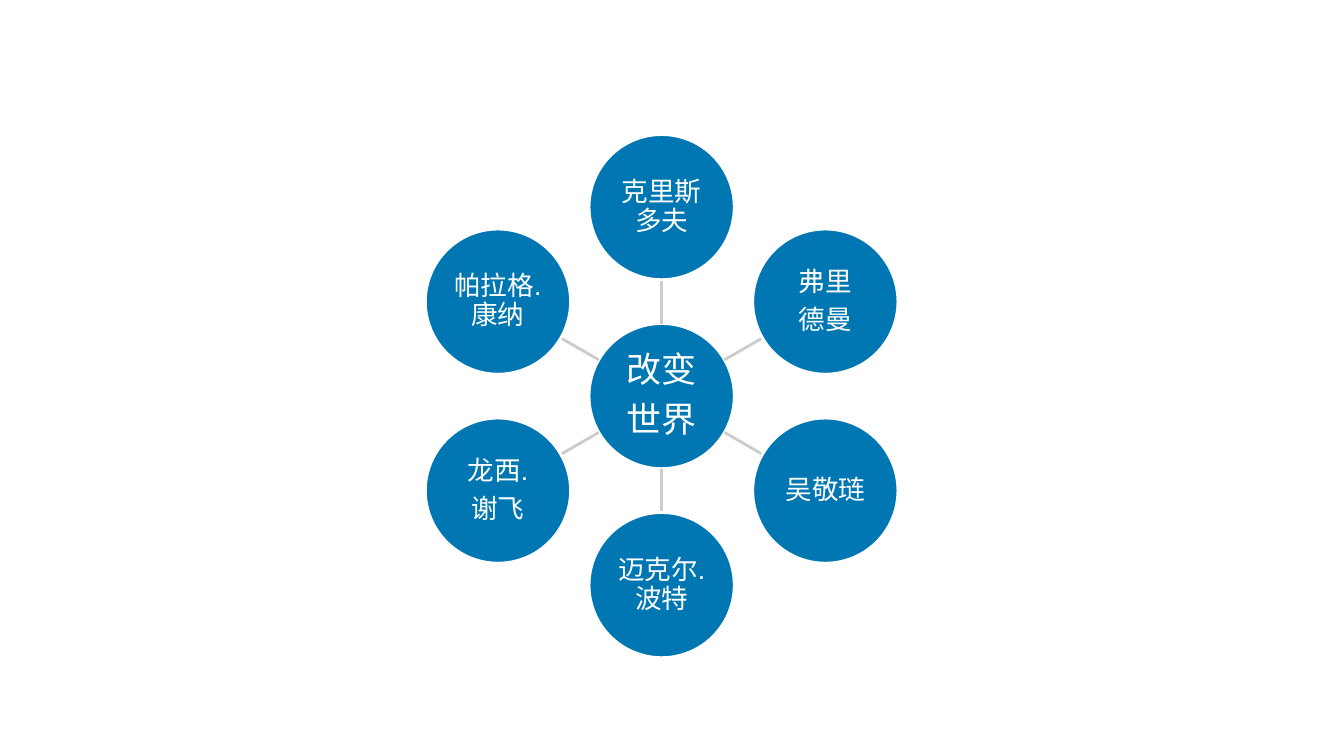
import math
from dataclasses import dataclass

from lxml import etree
from pptx import Presentation, util as u
from pptx.dml.color import RGBColor
from pptx.enum import shapes, text
from pptx.oxml.ns import qn

# Grid: square cells, 100 rows to the slide height
WIDTH, HEIGHT = u.Inches(13.33), u.Inches(7.5)
CELL = HEIGHT / 100
CENTER_COL, CENTER_ROW = 87.5, 52.4
RADIUS = 9.6
ORBIT = 25

BLUE, GREY, WHITE = "0077B2", "CCCCCC", "FFFFFF"


@dataclass(frozen=True)
class Node:
    lines: tuple[str, ...]
    size: int = 19
    inset: float = 0.01


HUB = Node(("改变", "世界"), size=25, inset=0.02)

# Clockwise from the top
THINKERS = [
    Node(("克里斯多夫",)),
    Node(("弗里", "德曼")),
    Node(("吴敬琏",)),
    Node(("迈克尔.波特",)),
    Node(("龙西.", "谢飞")),
    Node(("帕拉格.康纳",)),
]


def color(hex_value: str) -> RGBColor:
    return RGBColor.from_string(hex_value)


def cells(count: float) -> int:
    return round(count * CELL)


def polar(distance: float, angle: float) -> tuple[float, float]:
    """Column and row at a distance from the hub, clockwise from the top."""
    return (CENTER_COL + distance * math.sin(angle),
            CENTER_ROW - distance * math.cos(angle))


def apply(target: object, formats: dict) -> None:
    for name, value in formats.items():
        setattr(target, name, value)


def add_circle(s, node: Node, col: float, row: float) -> None:
    sp = s.shapes.add_shape(shapes.MSO_SHAPE.OVAL, cells(col - RADIUS),
                            cells(row - RADIUS), cells(2 * RADIUS), cells(2 * RADIUS))
    sp.shadow.inherit = False
    sp.fill.solid()
    sp.fill.fore_color.rgb = color(BLUE)
    sp.line.color.rgb = color(WHITE)
    sp.line.width = u.Pt(2)

    tf = sp.text_frame
    apply(tf, {"word_wrap": True, "vertical_anchor": text.MSO_ANCHOR.MIDDLE})
    apply(tf, {f"margin_{side}": u.Inches(node.inset)
               for side in ("left", "top", "right", "bottom")})
    for i, line in enumerate(node.lines):
        p = tf.paragraphs[0] if i == 0 else tf.add_paragraph()
        apply(p, {"alignment": text.PP_ALIGN.CENTER, "line_spacing": 0.9,
                  "space_after": u.Pt(0.35 * node.size)})
        r = p.add_run()
        r.text = line
        apply(r.font, {"name": "Arial", "size": u.Pt(node.size)})
        r.font.color.rgb = color(WHITE)


def add_spoke(s, angle: float) -> None:
    start, end = polar(RADIUS, angle), polar(ORBIT - RADIUS, angle)
    cn = s.shapes.add_connector(shapes.MSO_CONNECTOR.STRAIGHT,
                                *(cells(v) for v in start + end))
    cn.line.color.rgb = color(GREY)
    cn.line.width = u.Pt(2)
    etree.SubElement(cn._element.spPr, qn("a:effectLst"))


def main() -> None:
    prs = Presentation()
    apply(prs, {"slide_width": WIDTH, "slide_height": HEIGHT})
    s = prs.slides.add_slide(prs.slide_layouts[6])

    # Hub, then each spoke with its circle
    add_circle(s, HUB, CENTER_COL, CENTER_ROW)
    for i, thinker in enumerate(THINKERS):
        angle = math.tau * i / len(THINKERS)
        add_spoke(s, angle)
        add_circle(s, thinker, *polar(ORBIT, angle))

    prs.save("out.pptx")


if __name__ == "__main__":
    main()
